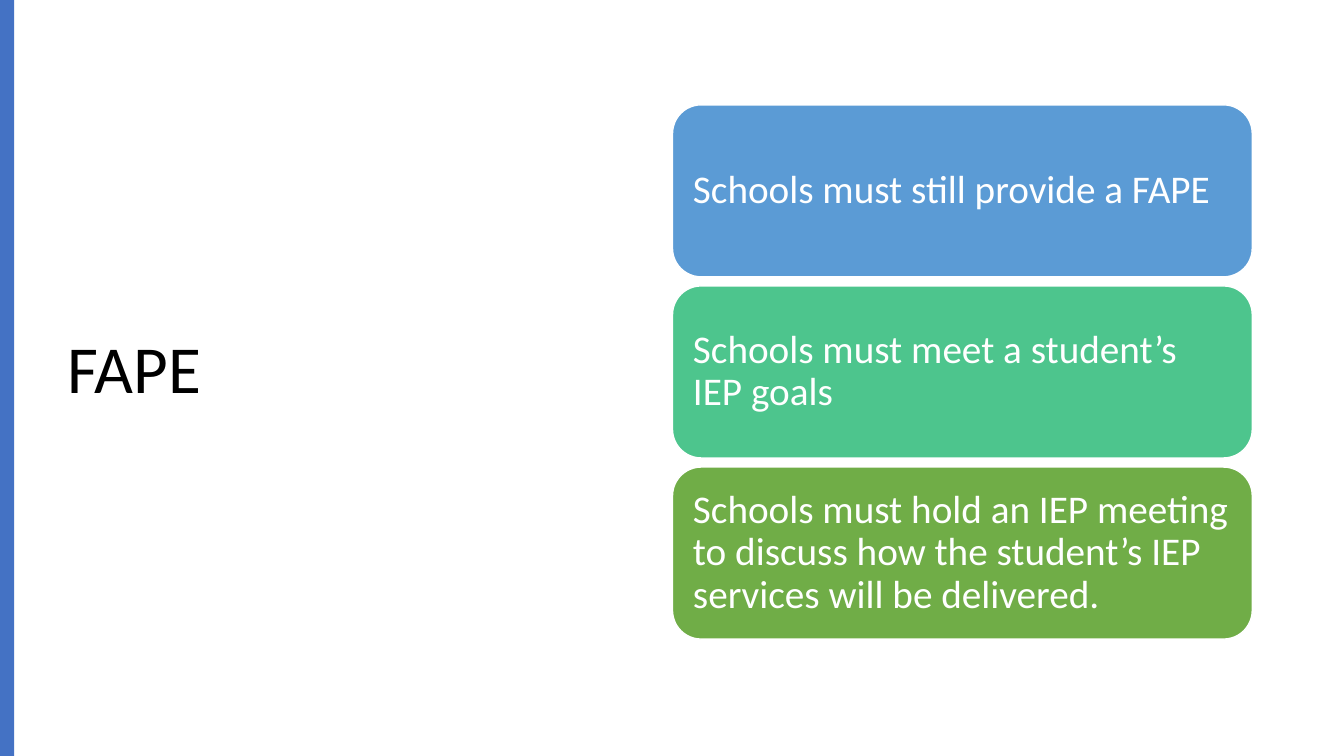
from pptx import Presentation
from pptx.dml.color import RGBColor
from pptx.enum import shapes, text
from pptx.util import Inches, Pt

FONT = "Calibri"
WHITE = "FFFFFF"
CARDS = [
    ("Schools must still provide a FAPE", "5B9BD5"),
    ("Schools must meet a student’s IEP goals", "4DC58D"),
    ("Schools must hold an IEP meeting to discuss how the student’s IEP services will be delivered.", "70AD47"),
]


def color(value):
    """Turn a hex string into a colour."""
    return RGBColor.from_string(value)


def write_text(shape, wording, size, ink):
    """Write one left-aligned, vertically centred paragraph."""
    frame = shape.text_frame
    frame.text = wording
    frame.word_wrap = True
    frame.auto_size = text.MSO_AUTO_SIZE.NONE
    frame.vertical_anchor = text.MSO_ANCHOR.MIDDLE
    paragraph = frame.paragraphs[0]
    paragraph.alignment = text.PP_ALIGN.LEFT
    paragraph.line_spacing = 0.9
    paragraph.font.name = FONT
    paragraph.font.size = Pt(size)
    paragraph.font.color.rgb = color(ink)
    return frame


def add_block(slide, kind, left, top, width, height, fill):
    """Add a flat filled shape without an outline."""
    shape = slide.shapes.add_shape(kind, Inches(left), Inches(top), Inches(width), Inches(height))
    shape.shadow.inherit = False
    shape.fill.solid()
    shape.fill.fore_color.rgb = color(fill)
    shape.line.fill.background()
    return shape


def place_title(slide, wording, left, top, width, height):
    """Move and format the title placeholder."""
    title = slide.shapes.title
    title.left, title.top = Inches(left), Inches(top)
    title.width, title.height = Inches(width), Inches(height)
    write_text(title, wording, 48, "000000")


def add_cards(slide, cards, left, top, width, height, gap=0.09):
    """Stack equal rounded cards in the given box."""
    card_height = (height - gap * (len(cards) - 1)) / len(cards)
    for index, (wording, fill) in enumerate(cards):
        card_top = top + index * (card_height + gap)
        card = add_block(slide, shapes.MSO_SHAPE.ROUNDED_RECTANGLE, left, card_top, width, card_height, fill)
        card.line.color.rgb = color(WHITE)
        card.line.width = Pt(1)
        frame = write_text(card, wording, 28, WHITE)
        frame.margin_left = frame.margin_right = Inches(0.12)
        frame.margin_top = frame.margin_bottom = Inches(0.12)


def main():
    """Build and save the slide."""
    presentation = Presentation()
    presentation.slide_width, presentation.slide_height = Inches(13.33), Inches(7.5)
    slide = presentation.slides.add_slide(presentation.slide_layouts[5])
    place_title(slide, "FAPE", 0.57, 0.68, 5.67, 6.02)
    add_block(slide, shapes.MSO_SHAPE.RECTANGLE, 0, 0, 0.14, 7.5, "4472C4")
    add_cards(slide, CARDS, 6.67, 1.04, 5.75, 5.3)
    presentation.save("out.pptx")


if __name__ == "__main__":
    main()
